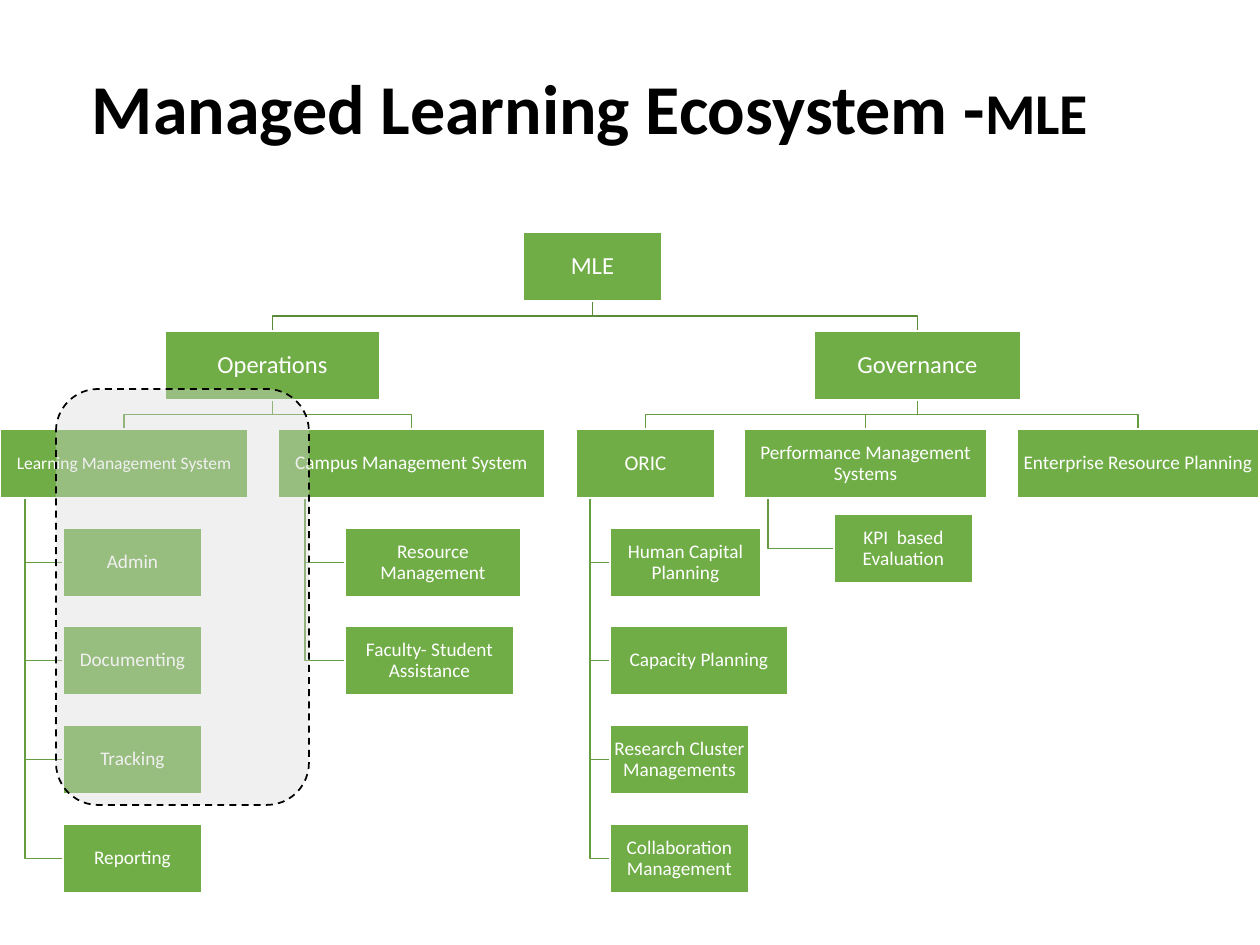
from dataclasses import dataclass

from lxml.etree import SubElement
from pptx import Presentation
from pptx.dml.color import RGBColor
from pptx.enum.dml import MSO_LINE_DASH_STYLE as Dash
from pptx.enum.shapes import MSO_SHAPE as Preset
from pptx.enum.text import MSO_ANCHOR as Anchor, PP_ALIGN as Align
from pptx.oxml.ns import qn
from pptx.util import Emu, Pt

SCALE = 914400 / 126
TOP, PITCH, HEIGHT = 232, 98.6, 69


@dataclass(frozen=True)
class Theme:
    """Colours and type sizes of the slide."""
    font: str = "Calibri"
    green: str = "70AD47"
    trunk: str = "5A8B39"
    twig: str = "669D40"
    white: str = "FFFFFF"
    black: str = "000000"
    veil: str = "D9D9D9"
    title: int = 40
    acronym: int = 33
    head: int = 14
    unit: int = 12
    body: int = 11
    small: int = 10


THEME = Theme()


@dataclass
class Node:
    """One box of the chart with the boxes that report to it."""
    label: str
    left: int
    width: int = 139
    size: int = THEME.body
    children: tuple = ()
    hanging: bool = False
    shift: int = 0
    top: int = 0

    @property
    def center(self):
        """Return the horizontal middle of the box."""
        return self.left + self.width / 2

    @property
    def bottom(self):
        """Return the lower edge of the box."""
        return self.top + HEIGHT


def px(length):
    """Turn pixels into EMU."""
    return Emu(round(length * SCALE))


def rgb(code):
    """Turn a hex code into a colour."""
    return RGBColor.from_string(code)


def write(frame, *runs, color=THEME.white, bold=False, align=Align.CENTER, inset=1):
    """Fill a text frame with (text, size) runs in one format."""
    frame.word_wrap = True
    frame.vertical_anchor = Anchor.MIDDLE
    frame.margin_left = frame.margin_right = px(inset)
    frame.margin_top = frame.margin_bottom = px(1)
    paragraph = frame.paragraphs[0]
    paragraph.alignment = align
    paragraph.line_spacing = 0.9
    for text, size in runs:
        run = paragraph.add_run()
        run.text = text
        run.font.name = THEME.font
        run.font.size = Pt(size)
        run.font.bold = bold
        run.font.color.rgb = rgb(color)


def add_panel(shapes, preset, bounds, fill, line):
    """Draw a filled preset shape with a thin outline."""
    panel = shapes.add_shape(preset, *map(px, bounds))
    panel.shadow.inherit = False
    panel.fill.solid()
    panel.fill.fore_color.rgb = rgb(fill)
    panel.line.color.rgb = rgb(line)
    panel.line.width = Pt(1)
    return panel


def add_link(shapes, points, color):
    """Draw an open angled line through the points."""
    start, *rest = [(px(x), px(y)) for x, y in points]
    builder = shapes.build_freeform(*start)
    builder.add_line_segments(rest, close=False)
    link = builder.convert_to_shape()
    link.shadow.inherit = False
    link.fill.background()
    link.line.color.rgb = rgb(color)
    link.line.width = Pt(1)


def place(node, row=0):
    """Set the top of a node and of everything below it."""
    node.top = round(TOP + PITCH * row) + node.shift
    for index, child in enumerate(node.children):
        place(child, row + 1 + (index if node.hanging else 0))


def walk(node):
    """Yield a node and all its descendants."""
    yield node
    for child in node.children:
        yield from walk(child)


def link_children(shapes, parent, color):
    """Join a parent to each of its children."""
    for child in parent.children:
        if parent.hanging:
            spine, level = parent.left + parent.width / 10, child.top + HEIGHT / 2
            points = [(spine, parent.bottom), (spine, level), (child.left, level)]
        else:
            middle = (parent.bottom + child.top) / 2
            points = [(parent.center, parent.bottom), (parent.center, middle),
                      (child.center, middle), (child.center, child.top)]
        add_link(shapes, points, color)


def add_chart_tree(shapes, root):
    """Draw all links, then all boxes over them."""
    place(root)
    for node in walk(root):
        link_children(shapes, node, THEME.trunk if node is root else THEME.twig)
    for node in walk(root):
        bounds = (node.left, node.top, node.width, HEIGHT)
        box = add_panel(shapes, Preset.RECTANGLE, bounds, THEME.green, THEME.white)
        write(box.text_frame, (node.label, node.size))


def add_highlight(shapes, bounds):
    """Draw the translucent dashed outline around a group of boxes."""
    veil = add_panel(shapes, Preset.ROUNDED_RECTANGLE, bounds, THEME.veil, THEME.black)
    veil.line.dash_style = Dash.DASH
    color = veil.fill._xPr.find(qn("a:solidFill"))[0]
    SubElement(color, qn("a:alpha")).set("val", "39000")


def build_tree():
    """Return the managed learning ecosystem as a tree."""
    learning = Node("Learning Management System", 0, 248, THEME.small, hanging=True, children=tuple(
        Node(label, 63) for label in ("Admin", "Documenting", "Tracking", "Reporting")))
    campus = Node("Campus Management System", 278, 267, hanging=True, children=(
        Node("Resource Management", 345, 176),
        Node("Faculty- Student Assistance", 345, 169)))
    oric = Node("ORIC", 576, size=THEME.unit, hanging=True, children=(
        Node("Human Capital Planning", 610, 151),
        Node("Capacity Planning", 610, 178),
        Node("Research Cluster Managements", 610),
        Node("Collaboration Management", 610)))
    performance = Node("Performance Management Systems", 744, 243, hanging=True, children=(
        Node("KPI  based Evaluation", 834, shift=-14),))
    planning = Node("Enterprise Resource Planning", 1017, 242)
    operations = Node("Operations", 165, 215, THEME.head, (learning, campus))
    governance = Node("Governance", 814, 207, THEME.head, (oric, performance, planning))
    return Node("MLE", 523, size=THEME.head, children=(operations, governance))


def main():
    """Build and save the slide."""
    deck = Presentation()
    deck.slide_width, deck.slide_height = px(1260), px(945)
    shapes = deck.slides.add_slide(deck.slide_layouts[6]).shapes
    title = shapes.add_textbox(*map(px, (79, 53, 1134, 118)))
    write(title.text_frame, ("Managed Learning Ecosystem -", THEME.title),
          ("MLE", THEME.acronym), color=THEME.black, bold=True, align=Align.LEFT, inset=13)
    add_chart_tree(shapes, build_tree())
    add_highlight(shapes, (56, 389, 253, 416))
    deck.save("out.pptx")


if __name__ == "__main__":
    main()
